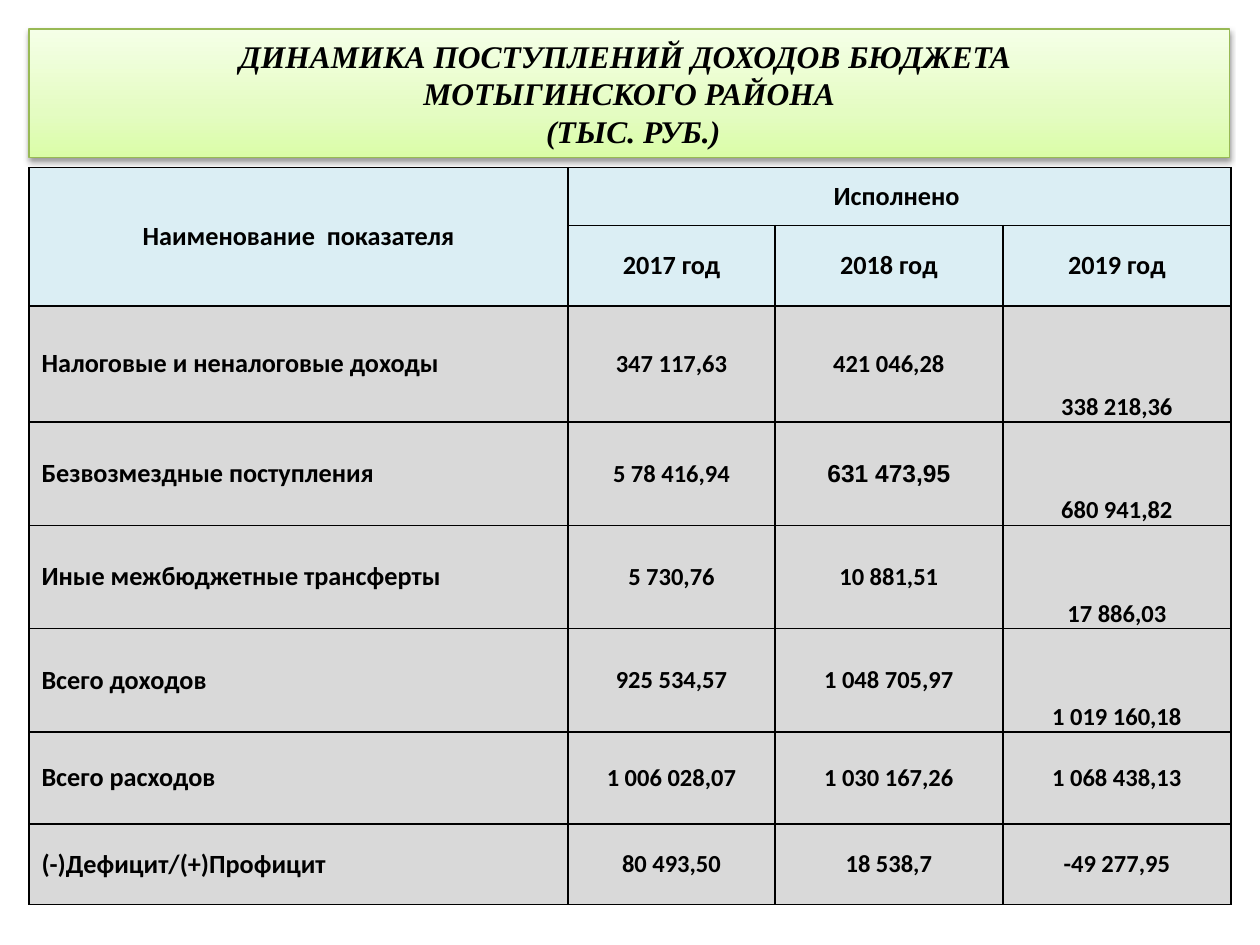
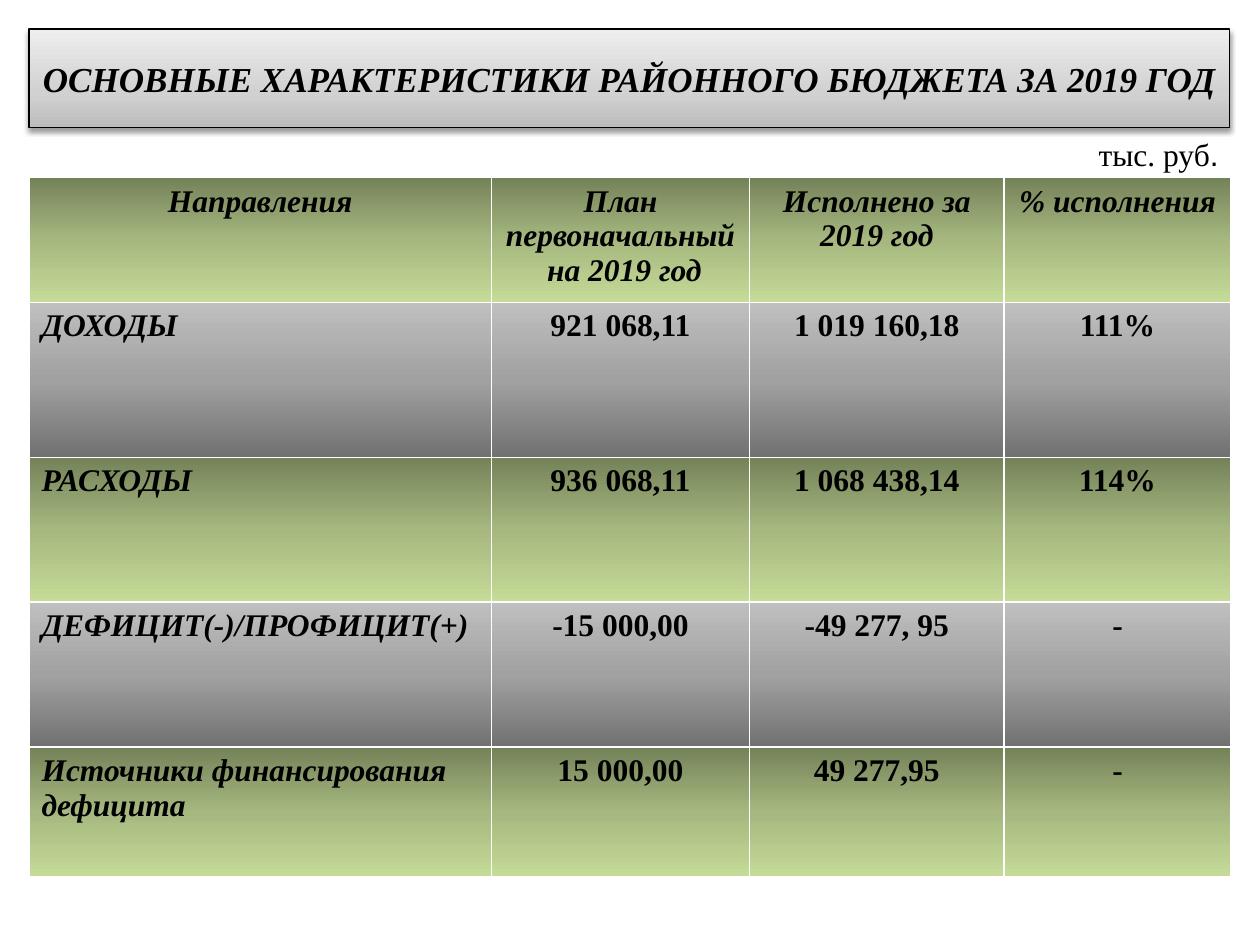
import copy

import pptx
import pptx.util
import pptx.dml.color
import pptx.enum.text
import pptx.oxml
import pptx.oxml.ns
from pptx.util import Inches

COLOURS = {
    "text": "000000", "white": "FFFFFF", "black": "000000",
    "header": "DBEEF4", "body": "D9D9D9", "lime line": "98B955",
}
# Gradients: stops by percent, then the angle in degrees
GRADIENTS = {
    "lime": ({0: "DAFDA7", 35: "E4FCC2", 100: "F5FFE7"}, 270),
    "silver": ({0: "BDBDBD", 35: "D1D1D1", 100: "EEEEEE"}, 270),
    "olive": ({0: "748259", 50: "A6B87F", 100: "C5DB97"}, 90),
    "grey": ({0: "717171", 50: "A1A1A1", 100: "BFBFBF"}, 270),
}
SERIF = "Times New Roman"
LEFT, TOP, WIDTH = 0.23, 0.23, 9.53
ALIGN = pptx.enum.text.PP_ALIGN
ANCHOR = pptx.enum.text.MSO_ANCHOR
NAMESPACE = pptx.oxml.ns.nsdecls("a")


def apply_format(target, values):
    for name, value in values.items():
        setattr(target, name, value)


def rgb(name):
    return pptx.dml.color.RGBColor.from_string(COLOURS[name])


class BudgetDeck:
    def __init__(self):
        self.presentation = pptx.Presentation()
        self.presentation.slide_width = Inches(10)
        self.presentation.slide_height = Inches(7.5)
        self.slide = None

    def add_slide(self):
        layout = self.presentation.slide_layouts.get_by_name("Title Only")
        self.slide = self.presentation.slides.add_slide(layout)

    def paint(self, target, properties, name):
        """Fill a shape or a cell with a plain colour or a gradient."""
        target.fill.solid()
        if name not in GRADIENTS:
            target.fill.fore_color.rgb = rgb(name)
            return
        stops, angle = GRADIENTS[name]
        stop_xml = "".join(
            f'<a:gs pos="{percent * 1000}"><a:srgbClr val="{colour}"/></a:gs>'
            for percent, colour in stops.items())
        gradient = pptx.oxml.parse_xml(
            f'<a:gradFill {NAMESPACE} rotWithShape="1"><a:gsLst>{stop_xml}</a:gsLst>'
            f'<a:lin ang="{angle * 60000}" scaled="0"/></a:gradFill>')
        properties.replace(properties.find(pptx.oxml.ns.qn("a:solidFill")), gradient)

    def set_text(self, paragraph, text, align, size, name, bold=True, italic=False):
        paragraph.text = text
        paragraph.alignment = align
        for run in paragraph.runs:
            apply_format(run.font, {"size": pptx.util.Pt(size), "name": name,
                                    "bold": bold, "italic": italic})
            run.font.color.rgb = rgb("text")
        # Line breaks take the size of the text around them
        for line_break in paragraph._p.findall(pptx.oxml.ns.qn("a:br")):
            line_break.insert(0, copy.deepcopy(paragraph.runs[0]._r.rPr))

    def title(self, text, height, size, fill, line):
        shape = self.slide.shapes.title
        apply_format(shape, {"left": Inches(LEFT), "top": Inches(TOP),
                             "width": Inches(WIDTH), "height": Inches(height)})
        properties = shape._element.spPr
        self.paint(shape, properties, fill)
        shape.line.color.rgb = rgb(line)
        shape.line.width = pptx.util.Pt(0.75)
        properties.append(pptx.oxml.parse_xml(
            f'<a:effectLst {NAMESPACE}><a:outerShdw blurRad="40000" dist="20000" '
            'dir="5400000" rotWithShape="0"><a:srgbClr val="000000">'
            '<a:alpha val="38000"/></a:srgbClr></a:outerShdw></a:effectLst>'))
        apply_format(shape.text_frame, {
            "word_wrap": True, "vertical_anchor": ANCHOR.MIDDLE,
            "auto_size": pptx.enum.text.MSO_AUTO_SIZE.NONE})
        self.set_text(shape.text_frame.paragraphs[0], text, ALIGN.CENTER, size,
                      SERIF, italic=True)

    def table(self, top, columns, rows, border):
        frame = self.slide.shapes.add_table(
            len(rows), len(columns), Inches(LEFT), Inches(top),
            Inches(WIDTH), Inches(sum(rows)))
        table = frame.table
        table.first_row = table.horz_banding = False
        for column, width in zip(table.columns, columns):
            column.width = Inches(width)
        for row, height in zip(table.rows, rows):
            row.height = Inches(height)
        for cell in table.iter_cells():
            properties = cell._tc.get_or_add_tcPr()
            for side in "LRTB":
                properties.append(pptx.oxml.parse_xml(
                    f'<a:ln{side} {NAMESPACE} w="12700"><a:solidFill>'
                    f'<a:srgbClr val="{COLOURS[border]}"/></a:solidFill></a:ln{side}>'))
        return table

    def cell(self, cell, text, fill, align, anchor, size, name, italic=False):
        self.paint(cell, cell._tc.tcPr, fill)
        cell.vertical_anchor = anchor
        if text:
            self.set_text(cell.text_frame.paragraphs[0], text, align, size, name,
                          italic=italic)

    def label(self, parts, left, top, width, height, size):
        """A right-aligned text box; parts pair each text with its font."""
        box = self.slide.shapes.add_textbox(
            Inches(left), Inches(top), Inches(width), Inches(height))
        box.text_frame.word_wrap = True
        paragraph = box.text_frame.paragraphs[0]
        paragraph.alignment = ALIGN.RIGHT
        for text, name in parts:
            run = paragraph.add_run()
            run.text = text
            apply_format(run.font, {"size": pptx.util.Pt(size), "name": name})
            run.font.color.rgb = rgb("text")


INCOME = [
    ["Наименование  показателя", "Исполнено ", "", ""],
    ["", "2017 год", "2018 год", "2019 год"],
    ["Налоговые и неналоговые доходы", "347 117,63", "421 046,28", "338 218,36"],
    ["Безвозмездные поступления", "5 78 416,94", "631 473,95", "680 941,82"],
    ["Иные межбюджетные трансферты", "5 730,76", "10 881,51", "17 886,03"],
    ["Всего доходов", "925 534,57", "1 048 705,97", "1 019 160,18"],
    ["Всего расходов", "1 006 028,07", "1 030 167,26", "1 068 438,13"],
    ["(-)Дефицит/(+)Профицит", "80 493,50", "18 538,7", "-49 277,95"],
]
EXECUTION = [
    ["Направления", "План первоначальный  на 2019 год",
     "Исполнено за 2019 год", "% исполнения"],
    ["ДОХОДЫ", "921 068,11", "1 019 160,18", "111%"],
    ["РАСХОДЫ", "936 068,11", "1 068 438,14", "114%"],
    ["ДЕФИЦИТ(-)/ПРОФИЦИТ(+)", "-15 000,00", "-49 277, 95", "-"],
    ["Источники финансирования дефицита", "15 000,00", "49 277,95", "-"],
]


def income_slide(deck):
    deck.add_slide()
    deck.title("ДИНАМИКА ПОСТУПЛЕНИЙ ДОХОДОВ БЮДЖЕТА \nМОТЫГИНСКОГО РАЙОНА\n (ТЫС. РУБ.)",
               1.02, 18, "lime", "lime line")
    table = deck.table(1.33, [4.28, 1.64, 1.81, 1.81],
                       [0.46, 0.64, 0.92, 0.82, 0.82, 0.82, 0.73, 0.64], "black")
    for r, row in enumerate(INCOME):
        for c, text in enumerate(row):
            header = r < 2
            cell = table.cell(r, c)
            # Income figures of the last year sit at the bottom of their cells
            low = c == 3 and 2 <= r <= 5
            if low:
                apply_format(cell, {"margin_left": Inches(0.01), "margin_top": Inches(0.01),
                                    "margin_right": Inches(0.01), "margin_bottom": 0})
            deck.cell(cell, text, "header" if header else "body",
                      ALIGN.CENTER if header or c else ALIGN.LEFT,
                      ANCHOR.BOTTOM if low else ANCHOR.MIDDLE,
                      15 if header or c == 0 else 14,
                      "Arial" if (r, c) == (3, 2) else "Calibri")
    table.cell(0, 0).merge(table.cell(1, 0))
    table.cell(0, 1).merge(table.cell(0, 3))


def execution_slide(deck):
    deck.add_slide()
    deck.title("ОСНОВНЫЕ ХАРАКТЕРИСТИКИ РАЙОННОГО БЮДЖЕТА ЗА 2019 ГОД",
               0.78, 20, "silver", "black")
    table = deck.table(1.41, [3.67, 2.05, 2.02, 1.8],
                       [0.99, 1.23, 1.15, 1.15, 1.03], "white")
    for r, row in enumerate(EXECUTION):
        for c, text in enumerate(row):
            deck.cell(table.cell(r, c), text, "grey" if r % 2 else "olive",
                      ALIGN.CENTER if r == 0 or c else ALIGN.LEFT, ANCHOR.TOP,
                      18, SERIF, italic=r == 0 or c == 0)
    deck.label([("тыс. руб", SERIF), (".", "Arial")], 8.44, 1.02, 1.33, 0.4, 18)


def main():
    deck = BudgetDeck()
    income_slide(deck)
    execution_slide(deck)
    deck.presentation.save("out.pptx")


if __name__ == "__main__":
    main()
